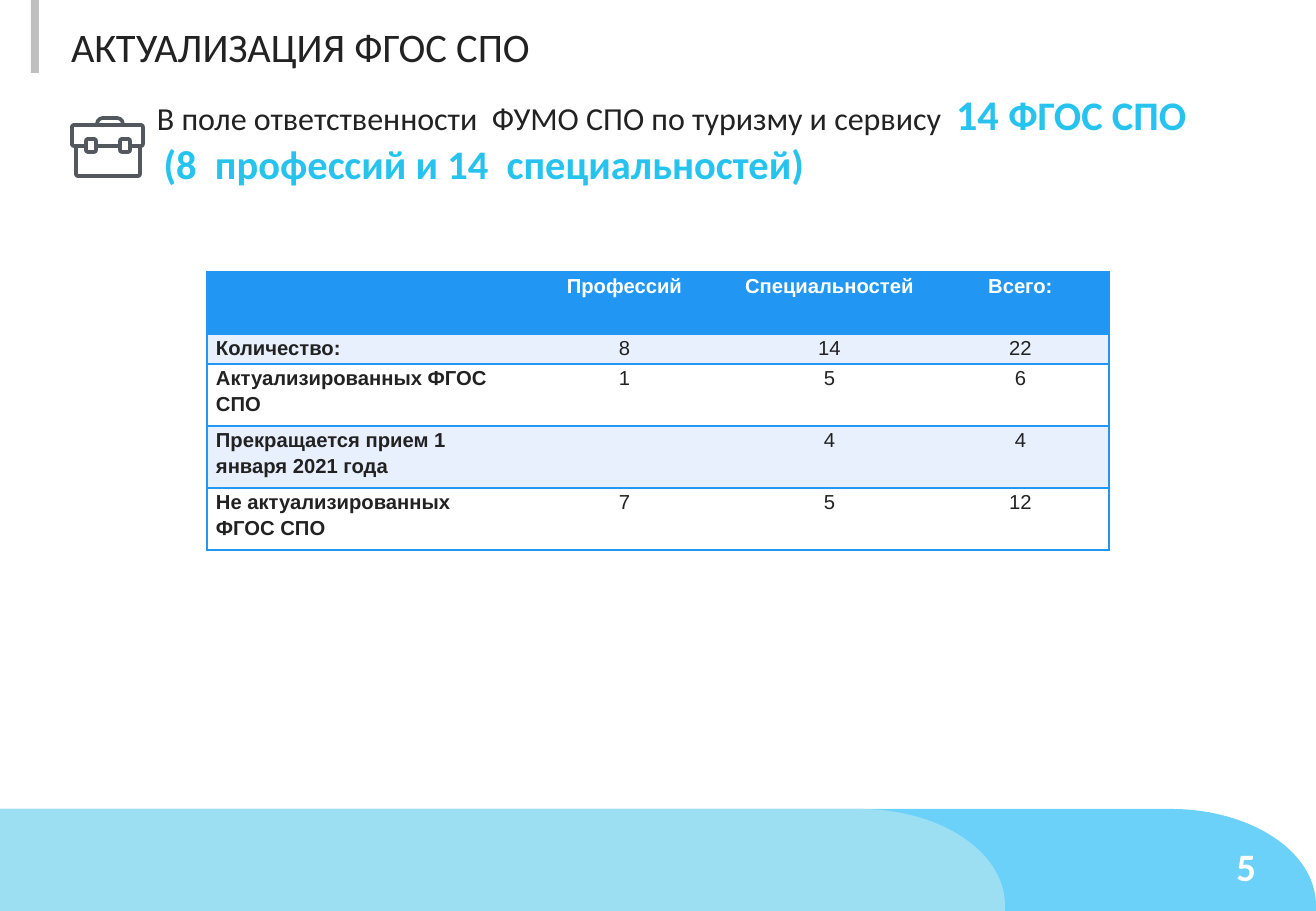
from math import cos, sin, pi

from pptx import Presentation
from pptx.dml.color import RGBColor
from pptx.enum.shapes import MSO_SHAPE as SHAPE
from pptx.enum.text import MSO_ANCHOR as ANCHOR, PP_ALIGN as ALIGN
from pptx.oxml import parse_xml
from pptx.oxml.ns import nsdecls
from pptx.util import Pt

EMU_PER_PX = 7526  # 121.5 px to the inch
WIDTH, HEIGHT = 1316, 911
INK, CYAN, BLUE, WHITE = "222222", "26C3EE", "2196F3", "FFFFFF"
BAND, ICON = "E8EFFD", "53585F"

ROWS = [
    ["", "Профессий", "Специальностей", "Всего:"],
    ["Количество:", "8", "14", "22"],
    ["Актуализированных ФГОС СПО", "1", "5", "6"],
    ["Прекращается прием 1 января 2021 года", "", "4", "4"],
    ["Не актуализированных ФГОС СПО", "7", "5", "12"],
]
COL_WIDTHS = [315, 205, 205, 177]
ROW_HEIGHTS = [62, 30, 62, 62, 62]


def px(n):
    return round(n * EMU_PER_PX)


def rgb(color):
    return RGBColor.from_string(color)


def style_run(r, size, color, bold=False, font="Calibri"):
    r.font.size, r.font.bold, r.font.name = Pt(size), bold, font
    r.font.color.rgb = rgb(color)


def add_text(s, x, y, w, h, paragraphs, align=ALIGN.LEFT, anchor=ANCHOR.TOP,
             inset=(15, 7)):
    """Each paragraph is a list of (text, *run style)."""
    tf = s.shapes.add_textbox(px(x), px(y), px(w), px(h)).text_frame
    tf.word_wrap, tf.vertical_anchor = True, anchor
    tf.margin_left = tf.margin_right = px(inset[0])
    tf.margin_top = tf.margin_bottom = px(inset[1])
    for i, runs in enumerate(paragraphs):
        p = tf.add_paragraph() if i else tf.paragraphs[0]
        p.alignment = align
        for text, *style in runs:
            r = p.add_run()
            r.text = text
            style_run(r, *style)


def paint(sp, fill, line=None):
    sp.shadow.inherit = False
    sp.fill.solid()
    sp.fill.fore_color.rgb = rgb(fill)
    if line:
        sp.line.color.rgb = rgb(line)
        sp.line.width = Pt(2.2)
    else:
        sp.line.fill.background()


def add_briefcase(s):
    # Handle, body, lid and two clasps, from back to front
    for x, y, w, h, radius in [(97, 118, 26, 18, 6), (76, 135, 64, 41, 2),
                               (72, 125, 71, 21, 2), (86, 139, 10, 13, 2),
                               (120, 139, 10, 13, 2)]:
        sp = s.shapes.add_shape(SHAPE.ROUNDED_RECTANGLE, px(x), px(y), px(w), px(h))
        sp.adjustments[0] = radius / min(w, h)
        paint(sp, WHITE, ICON)


def add_wave(s, right, color):
    """Footer band with an elliptical top right corner."""
    top, rx, ry, steps = 809, 145, 96, 40
    angles = [pi / 2 * i / steps for i in range(steps + 1)]
    corner = [(px(right - rx + rx * sin(a)), px(top + ry - ry * cos(a))) for a in angles]
    fb = s.shapes.build_freeform(0, px(top))
    fb.add_line_segments(corner + [(px(right), px(HEIGHT)), (0, px(HEIGHT))])
    paint(fb.convert_to_shape(), color)


def set_borders(cell, first, last):
    shown = {"lnL": first, "lnR": last, "lnT": True, "lnB": True}
    for i, (side, visible) in enumerate(shown.items()):
        fill = f'<a:solidFill><a:srgbClr val="{BLUE}"/></a:solidFill>' if visible else "<a:noFill/>"
        line = f'<a:{side} {nsdecls("a")} w="12700">{fill}</a:{side}>'
        cell._tc.get_or_add_tcPr().insert(i, parse_xml(line))


def fill_cell(cell, text, row, col):
    cell.fill.solid()
    cell.fill.fore_color.rgb = rgb(BLUE if row == 0 else BAND if row % 2 else WHITE)
    cell.margin_left = cell.margin_right = px(9)
    cell.margin_top = cell.margin_bottom = 0
    set_borders(cell, col == 0, col == len(COL_WIDTHS) - 1)
    if text:
        cell.text_frame.text = text
        p = cell.text_frame.paragraphs[0]
        p.alignment = ALIGN.CENTER if col else ALIGN.LEFT
        p.line_spacing = 1.15
        style_run(p.runs[0], 12, INK if row else WHITE, row == 0 or col == 0, "Arial")


def add_summary_table(s, x, y):
    table = s.shapes.add_table(len(ROWS), len(COL_WIDTHS), px(x), px(y),
                               px(sum(COL_WIDTHS)), px(sum(ROW_HEIGHTS))).table
    table.horz_banding = False
    for column, w in zip(table.columns, COL_WIDTHS):
        column.width = px(w)
    for i, (row, h) in enumerate(zip(table.rows, ROW_HEIGHTS)):
        row.height = px(h)
        for j, text in enumerate(ROWS[i]):
            fill_cell(table.cell(i, j), text, i, j)


def main():
    prs = Presentation()
    prs.slide_width, prs.slide_height = px(WIDTH), px(HEIGHT)
    s = prs.slides.add_slide(prs.slide_layouts[6])

    # Heading
    add_text(s, 145, 73, 1221 - 0, 129, [
        [("В поле ответственности  ФУМО СПО по туризму и сервису  ", 19, INK),
         ("14 ", 25, CYAN, True), ("ФГОС СПО", 24, CYAN, True)],
        [(" ", 14, "000000", False, "Arial"),
         ("(8  профессий и 14  специальностей)", 24, CYAN, True)],
    ], anchor=ANCHOR.MIDDLE, inset=(12, 6))
    add_text(s, 56, 15, 964, 63, [[("АКТУАЛИЗАЦИЯ ФГОС СПО", 24, INK)]])
    paint(s.shapes.add_shape(SHAPE.RECTANGLE, px(31), 0, px(8), px(73)), "BFBFBF")
    add_briefcase(s)

    # Footer
    add_wave(s, WIDTH, "6BD1F9")
    add_wave(s, 1005, "9CDEF2")
    add_text(s, 964, 836, 307, 49, [[("5", 23, WHITE, True)]], ALIGN.RIGHT)

    # Summary table
    add_summary_table(s, 207, 272)
    prs.save("out.pptx")


if __name__ == "__main__":
    main()
